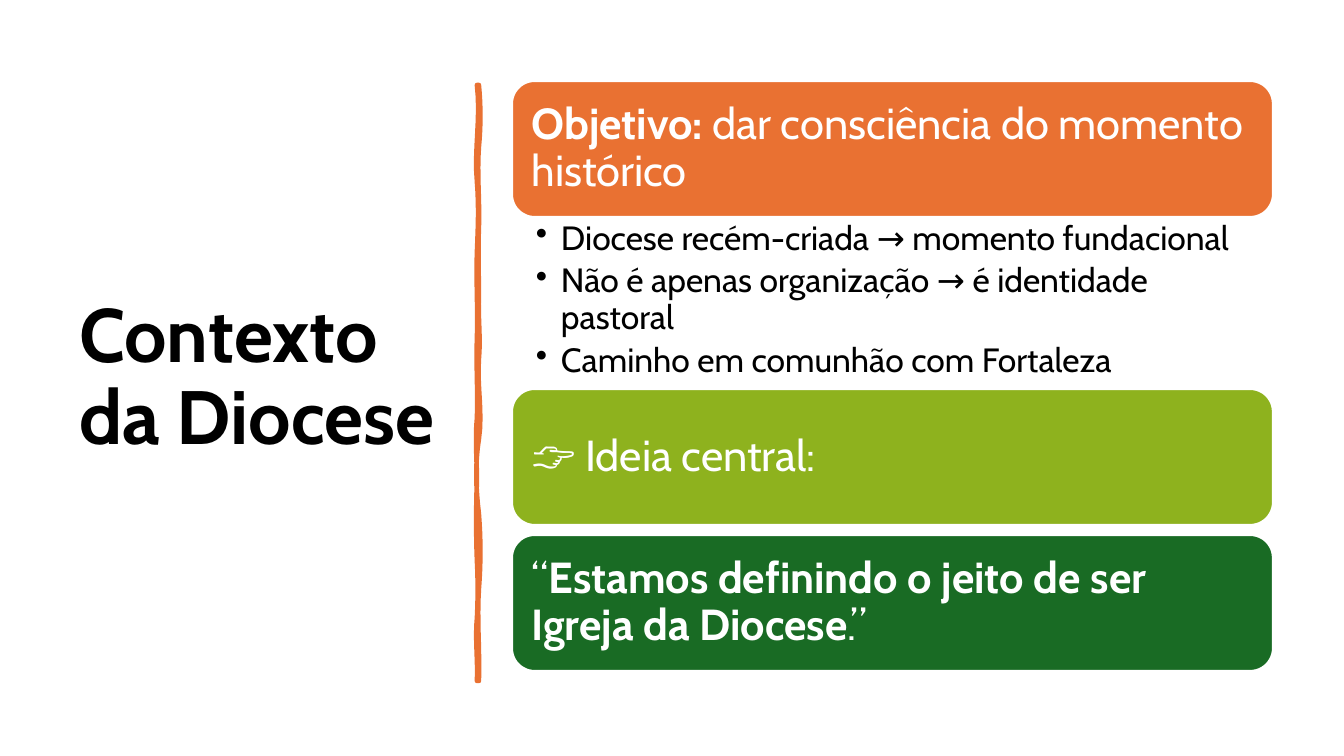
from lxml.etree import SubElement
from pptx import Presentation
from pptx.dml.color import RGBColor
from pptx.enum.shapes import MSO_SHAPE as Shape
from pptx.enum.text import MSO_ANCHOR as Anchor, MSO_AUTO_SIZE as Fit, PP_ALIGN as Align
from pptx.oxml.ns import qn
from pptx.util import Pt

BLACK = RGBColor(0x00, 0x00, 0x00)
WHITE = RGBColor(0xFF, 0xFF, 0xFF)
ORANGE = RGBColor(0xE9, 0x71, 0x32)
LIME = RGBColor(0x8E, 0xB2, 0x1E)
GREEN = RGBColor(0x19, 0x6B, 0x24)
FONT = "Cabin"

# Each paragraph is a list of (text, bold) runs.
TITLE = [[("Contexto da Diocese", True)]]
GOAL = [[("Objetivo:", True), (" dar consciência do momento histórico", False)]]
POINTS = [
    [("Diocese recém-criada → momento fundacional", False)],
    [("Não é apenas organização → é identidade pastoral", False)],
    [("Caminho em comunhão com Fortaleza", False)],
]
IDEA = [[("👉 Ideia central:", False)]]
QUOTE = [[("“", False), ("Estamos definindo o jeito de ser Igreja da Diocese", True),
          (".”", False)]]

# Lengths in px
PX = 914400 / 100.8
LEFT, WIDE, HIGH = 512, 761, 136
CARDS = [(81, ORANGE, GOAL), (389, LIME, IDEA), (535, GREEN, QUOTE)]

# Hand-drawn rule: each edge has an x, a start y, and spans of
# (end y, first bend, second bend).
EDGES = [
    (479, 85, [(147, 2, 2), (228, -2, 1), (296, -1, 0), (359, -1, 2),
               (439, -2, 4), (514, -4, -3), (589, 2, 2), (681, -2, 1)]),
    (477, 681, [(618, 1, -2), (561, 1, 1), (481, -1, -1), (418, 0, -2),
                (338, 1, -1), (252, 1, -1), (182, 1, 2), (85, -3, 4)]),
]
STEPS = 8


def px(n):
    return round(n * PX)


def write(frame, paras, size, color, anchor=Anchor.MIDDLE, pad=(10, 5),
          bullet=False, after=0):
    frame.word_wrap = True
    frame.auto_size = Fit.NONE
    frame.vertical_anchor = anchor
    frame.margin_left = frame.margin_right = px(pad[0])
    frame.margin_top = frame.margin_bottom = px(pad[1])
    for i, runs in enumerate(paras):
        para = frame.add_paragraph() if i else frame.paragraphs[0]
        if bullet:
            props = para._p.get_or_add_pPr()
            props.set("marL", str(px(25)))
            props.set("indent", str(-px(25)))
            SubElement(props, qn("a:buChar")).set("char", "•")
            para.level = 1
        para.alignment = Align.LEFT
        para.line_spacing = 0.9
        para.space_before = Pt(0)
        para.space_after = Pt(after)
        for text, bold in runs:
            run = para.add_run()
            run.text = text
            font = run.font
            font.name, font.size, font.bold = FONT, Pt(size), bold
            font.color.rgb = color


def paint(shape, fill, line, width):
    shape.shadow.inherit = False
    shape.fill.solid()
    shape.fill.fore_color.rgb = fill
    shape.line.color.rgb = line
    shape.line.width = Pt(width)


def trace(x, y, spans):
    """Return points along an edge, bent sideways as cubic curves."""
    dots = [(px(x), px(y))]
    for end, one, two in spans:
        for k in range(1, STEPS + 1):
            t = k / STEPS
            bend = 3 * t * (1 - t) * (one * (1 - t) + two * t)
            dots.append((px(x + bend), px(y + (end - y) * t)))
        y = end
    return dots


def main():
    deck = Presentation()
    deck.slide_width, deck.slide_height = px(1344), px(756)
    slide = deck.slides.add_slide(deck.slide_layouts[5])
    shapes = slide.shapes

    title = shapes.title
    title.left, title.top, title.width, title.height = map(px, (69, 71, 377, 616))
    write(title.text_frame, TITLE, 54, BLACK)

    dots = [dot for edge in EDGES for dot in trace(*edge)]
    pen = shapes.build_freeform(*dots[0])
    pen.add_line_segments(dots[1:])
    paint(pen.convert_to_shape(), ORANGE, ORANGE, 3.25)

    for top, color, paras in CARDS:
        card = shapes.add_shape(Shape.ROUNDED_RECTANGLE,
                                *map(px, (LEFT, top, WIDE, HIGH)))
        paint(card, color, WHITE, 1.5)
        write(card.text_frame, paras, 31, WHITE, pad=(13, 13))

    top = CARDS[0][0] + HIGH
    box = shapes.add_textbox(*map(px, (LEFT, top, WIDE, CARDS[1][0] - top)))
    write(box.text_frame, POINTS, 24, BLACK, Anchor.TOP, (24, 4),
          bullet=True, after=4.8)

    deck.save("out.pptx")


if __name__ == "__main__":
    main()
